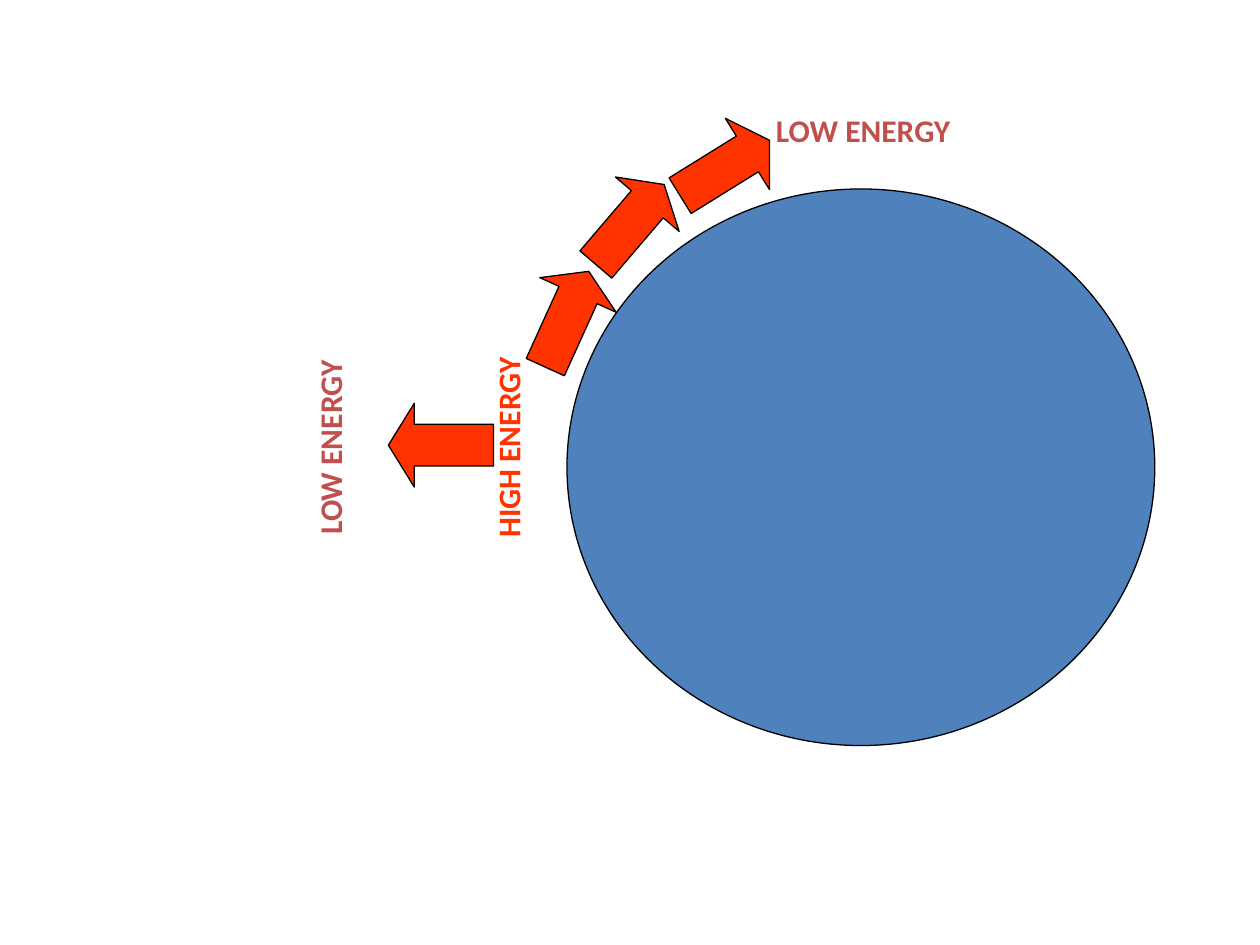
from pptx import Presentation
from pptx.dml.color import RGBColor
from pptx.enum import shapes, text
from pptx.util import Cm, Pt

BLUE = RGBColor(0x4F, 0x81, 0xBD)
ORANGE = RGBColor(0xFF, 0x33, 0x00)
RED = RGBColor(0xC0, 0x50, 0x4D)
BLACK = RGBColor(0, 0, 0)

PLANET = (11.43, 3.81, 11.85, 11.22)
LABEL_SIZE = (4.32, 1.78)
LABELS = [
    ("HIGH ENERGY", 8.46, 8.13, 270, ORANGE),
    ("LOW ENERGY", 4.87, 8.13, 270, RED),
    ("LOW ENERGY", 15.24, 2.12, 0, RED),
]
ARROW_SIZE = (2.12, 1.69)
ARROWS = [
    (7.83, 8.13, 0),
    (10.37, 5.59, 114.4),
    (11.64, 3.68, 130.5),
    (13.55, 2.54, 148.2),
]
FONT = {"name": "Calibri", "size": Pt(18), "bold": True}
FRAME = {
    "word_wrap": True,
    "auto_size": text.MSO_AUTO_SIZE.NONE,
    "vertical_anchor": text.MSO_ANCHOR.TOP,
}


def add_outlined(s, kind, box, color):
    sp = s.shapes.add_shape(kind, *map(Cm, box))
    sp.shadow.inherit = False
    sp.fill.solid()
    sp.fill.fore_color.rgb = color
    sp.line.color.rgb = BLACK
    sp.line.width = Pt(0.75)
    return sp


def add_label(s, wording, left, top, angle, color):
    sp = s.shapes.add_textbox(*map(Cm, (left, top, *LABEL_SIZE)))
    sp.rotation = angle
    tf = sp.text_frame
    for name, value in FRAME.items():
        setattr(tf, name, value)
    p = tf.paragraphs[0]
    p.alignment = text.PP_ALIGN.CENTER
    r = p.add_run()
    r.text = wording
    for name, value in FONT.items():
        setattr(r.font, name, value)
    r.font.color.rgb = color


def main():
    prs = Presentation()
    prs.slide_width, prs.slide_height = Cm(25.4), Cm(19.05)
    s = prs.slides.add_slide(prs.slide_layouts[6])
    add_outlined(s, shapes.MSO_SHAPE.OVAL, PLANET, BLUE)
    for label in LABELS:
        add_label(s, *label)
    for left, top, angle in ARROWS:
        sp = add_outlined(s, shapes.MSO_SHAPE.LEFT_ARROW, (left, top, *ARROW_SIZE), ORANGE)
        sp.rotation = angle
        sp.adjustments[0] = 0.5
        sp.adjustments[1] = 0.31
    prs.save("out.pptx")


if __name__ == "__main__":
    main()
